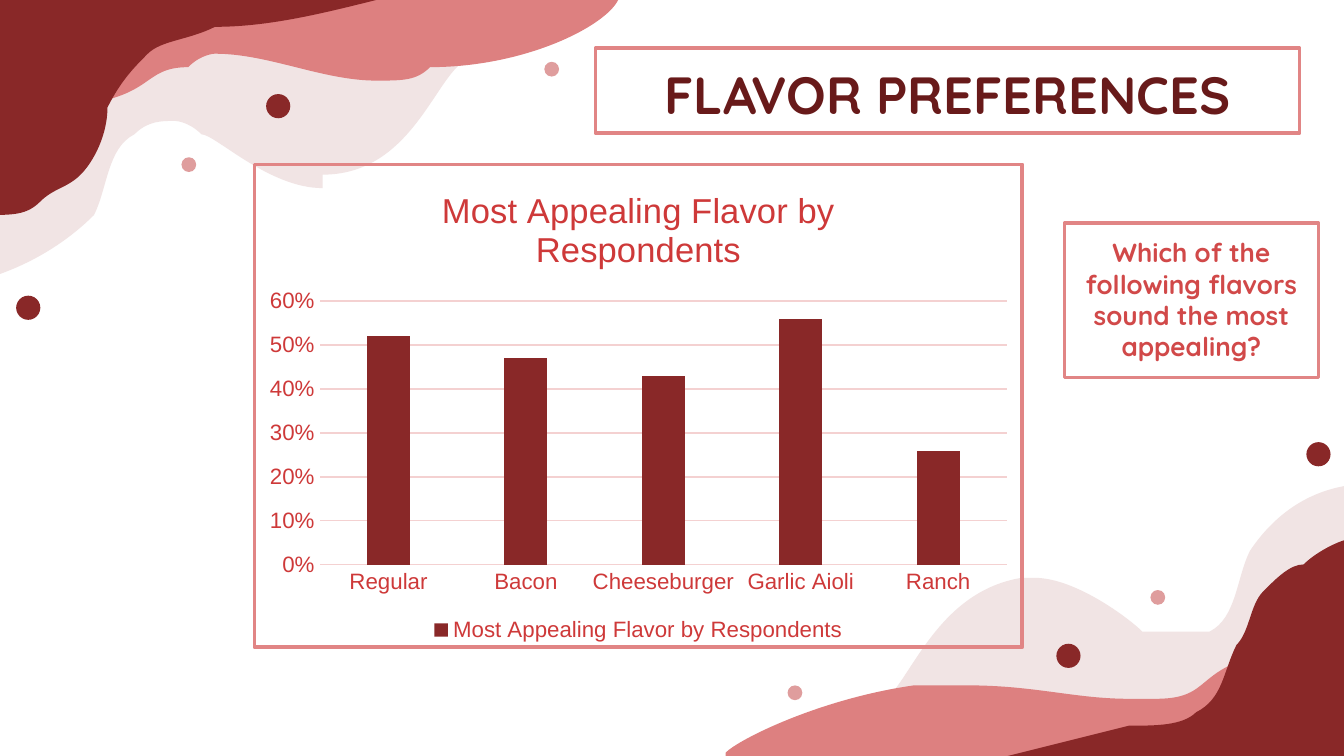
from lxml import etree
from pptx import Presentation
from pptx import util as u
from pptx.chart.data import CategoryChartData
from pptx.dml.color import RGBColor
from pptx.enum import chart as ch, shapes, text
from pptx.oxml import parse_xml
from pptx.oxml.ns import nsdecls, qn

COLORS = {"pale": "F1E4E4", "pink": "DD8080", "dark": "892828", "dot": "DF9D9D",
          "frame": "E18585", "grid": "F4D1D1", "title": "681A1A",
          "chart": "CE3939", "question": "D14949"}
COLORS_RGB = {name: RGBColor.from_string(value) for name, value in COLORS.items()}

# The slide is a grid of 100 columns by 56.25 rows; every length is in cells.
presentation = Presentation()
presentation.slide_width, presentation.slide_height = u.Inches(10), u.Inches(5.625)
CELL = presentation.slide_width // 100
TURN_X, TURN_Y = 100.2, 56.7  # the bottom corner is the top one turned by 180 degrees


def cells(*lengths):
    return [u.Emu(round(length * CELL)) for length in lengths]


def bend(shape):
    """Turn each three line segments of a freeform into one cubic curve."""
    lines = list(shape._element.iter(qn("a:lnTo")))
    for i in range(0, len(lines), 3):
        curve = etree.Element(qn("a:cubicBezTo"))
        lines[i].addprevious(curve)
        for line in lines[i:i + 3]:
            curve.append(line[0])
            line.getparent().remove(line)


slide = presentation.slides.add_slide(presentation.slide_layouts[5])

# Waves and dots in two opposite corners; a wave is a start, then two controls and an end each
waves = [
    ("pale", [(37.8, 1.8), (39.8, 1.8), (41.5, 1.9), (41.4, 2.3), (41.2, 2.6), (38.5, 2.9),
              (37.9, 3.2), (36.6, 3.7), (35.4, 4.3), (34.5, 5.2), (32.2, 7.1), (30.1, 12.7),
              (24.4, 13.4), (24.1, 13.5), (23.8, 13.5), (23.6, 13.5), (19.7, 13.5),
              (16.3, 10.5), (14.9, 9.8), (14.2, 9.4), (13.4, 9.3), (12.6, 9.3), (11.9, 9.3),
              (11.2, 9.4), (10.5, 9.7), (7.9, 10.9), (7.9, 13.7), (6.8, 15.8), (5.4, 18.5),
              (2.2, 20.4), (-1.5, 20.7), (-1.3, 14.9), (-1.7, 9.1), (-2.8, 3.4), (2.1, 2.7),
              (7.1, 2.6), (12.1, 2.5), (18.9, 2.3), (25.8, 2.1), (32.7, 2), (33.2, 1.9),
              (35.6, 1.8), (37.8, 1.8)]),
    ("pink", [(24.2, -3.6), (31.4, -3.6), (38.5, -3.3), (46.9, -2.6), (46.3, -1.8),
              (46.2, -0.3), (45.8, 0.3), (44.9, 1.6), (39.1, 4.7), (32.1, 5.4), (30.8, 5.6),
              (29.6, 5.6), (28.5, 5.6), (23.5, 5.6), (19.8, 4.5), (16.1, 4.5), (15.5, 4.5),
              (14.9, 4.5), (14.3, 4.6), (9.5, 5.1), (12.4, 7.9), (1.7, 8.2), (3.1, 4.6),
              (2.7, 0.8), (2.4, -2.9), (10.5, -3.4), (17.4, -3.6), (24.2, -3.6)]),
    ("dark", [(-0.9, 16.2), (-1.7, 16.2), (-2.4, 16), (-3, 15.8), (-3.6, 15.5), (-3.6, 15.2),
              (-3.5, 14.6), (-3.3, 12.9), (-3, 11.3), (-2.7, 9.7), (-2.5, 8.1), (-2.2, 6.5),
              (-2, 4.9), (-1.7, 3.4), (-1.2, 1.7), (-1.2, 0.1), (-1.2, 0), (-1.2, -0.2),
              (-0.8, -0.3), (3.5, -0.4), (7.7, -0.5), (11.9, -0.5), (17.2, -0.5),
              (22.5, -0.4), (27.8, -0.1), (24, 1.2), (20.1, 2), (16.1, 2.4), (14.4, 2.6),
              (12.5, 2.7), (11, 3.7), (9.5, 4.7), (8.8, 6.5), (8.2, 8.3), (7.6, 10),
              (7.1, 11.8), (5.9, 13.2), (5.2, 13.9), (4.3, 14.5), (3.4, 15), (2.1, 15.7),
              (0.6, 16.2), (-0.9, 16.2)]),
]
dots = [("dot", 40.5, 4.6, 1.1), ("dark", 19.8, 7, 1.8),
        ("dot", 13.5, 11.7, 1.1), ("dark", 1.2, 22, 1.8)]
for turned in (True, False):
    decorations = []
    for color, points in waves:
        if turned:
            points = [(TURN_X - x, TURN_Y - y) for x, y in points]
        builder = slide.shapes.build_freeform(*points[0], scale=CELL)
        builder.add_line_segments(points[1:], close=True)
        wave = builder.convert_to_shape()
        bend(wave)
        decorations.append((color, wave))
    for color, x, y, size in dots:
        if turned:
            x, y = TURN_X - x - size, TURN_Y - y - size
        decorations.append((color, slide.shapes.add_shape(
            shapes.MSO_SHAPE.OVAL, *cells(x, y, size, size))))
    for color, shape in decorations:
        shape.shadow.inherit = False
        shape.fill.solid()
        shape.fill.fore_color.rgb = COLORS_RGB[color]
        shape.line.fill.background()

# Chart
SERIES = "Most Appealing Flavor by Respondents"
data = CategoryChartData(number_format="0%")
data.categories = ["Regular", "Bacon", "Cheeseburger", "Garlic Aioli", "Ranch"]
data.add_series(SERIES, [0.52, 0.47, 0.43, 0.56, 0.26])
chart = slide.shapes.add_chart(ch.XL_CHART_TYPE.COLUMN_CLUSTERED,
                               *cells(18.8, 12.1, 57.4, 36.2), data).chart
chart.has_title = chart.has_legend = True
chart.chart_title.include_in_layout = False
chart.chart_title.text_frame.text = SERIES
chart.legend.position = ch.XL_LEGEND_POSITION.BOTTOM
chart.legend.include_in_layout = False

plot = chart.plots[0]
plot.gap_width, plot.overlap, plot.vary_by_categories = 219, -27, False
bars = plot.series[0].format.fill
bars.solid()
bars.fore_color.rgb = COLORS_RGB["dark"]

category_axis, value_axis = chart.category_axis, chart.value_axis
for axis in (category_axis, value_axis):
    axis.major_tick_mark = axis.minor_tick_mark = ch.XL_TICK_MARK.NONE
axis_format = {"minimum_scale": 0, "maximum_scale": 0.6, "major_unit": 0.1,
               "has_major_gridlines": True}
for name, value in axis_format.items():
    setattr(value_axis, name, value)
value_axis.tick_labels.number_format = "0%"
value_axis.tick_labels.number_format_is_linked = False
value_axis.format.line.fill.background()
for line in (category_axis.format.line, value_axis.major_gridlines.format.line):
    line.color.rgb = COLORS_RGB["grid"]
    line.width = u.Pt(0.75)

title_font = chart.chart_title.text_frame.paragraphs[0].runs[0].font
for font, size, color in [(chart.font, 10, "title"), (title_font, 18.6, "chart"),
                          (category_axis.tick_labels.font, 12, "chart"),
                          (value_axis.tick_labels.font, 12, "chart"),
                          (chart.legend.font, 12, "chart")]:
    for name, value in {"name": "Arial", "size": u.Pt(size), "bold": False}.items():
        setattr(font, name, value)
    font.color.rgb = COLORS_RGB[color]

border = parse_xml(
    f'<c:spPr {nsdecls("c", "a")}><a:noFill/><a:ln w="{u.Pt(2)}"><a:solidFill>'
    f'<a:srgbClr val="{COLORS["frame"]}"/></a:solidFill></a:ln></c:spPr>')
chart.element.find(qn("c:chart")).addnext(border)

# Framed title and question
title = slide.shapes.title
title.left, title.top, title.width, title.height = cells(44.3, 3.6, 52.4, 6.3)
slide.shapes._spTree.append(title._element)
question = slide.shapes.add_textbox(*cells(79.2, 16.6, 18.9, 11.5))
for shape, words, size, color, fit in [
        (title, "FLAVOR PREFERENCES", 28, "title", text.MSO_AUTO_SIZE.NONE),
        (question, "Which of the following flavors sound the most appealing?", 14,
         "question", text.MSO_AUTO_SIZE.TEXT_TO_FIT_SHAPE)]:
    shape.line.color.rgb = COLORS_RGB["frame"]
    shape.line.width = u.Pt(2)
    frame = shape.text_frame
    frame_format = {"text": words, "word_wrap": True, "auto_size": fit,
                    "vertical_anchor": text.MSO_ANCHOR.TOP}
    frame_format.update({f"margin_{side}": u.Inches(0.1)
                         for side in ("left", "top", "right", "bottom")})
    for name, value in frame_format.items():
        setattr(frame, name, value)
    paragraph = frame.paragraphs[0]
    paragraph.alignment = text.PP_ALIGN.CENTER
    font = paragraph.runs[0].font
    for name, value in {"name": "Quicksand", "size": u.Pt(size), "bold": True}.items():
        setattr(font, name, value)
    font.color.rgb = COLORS_RGB[color]

presentation.save("out.pptx")
